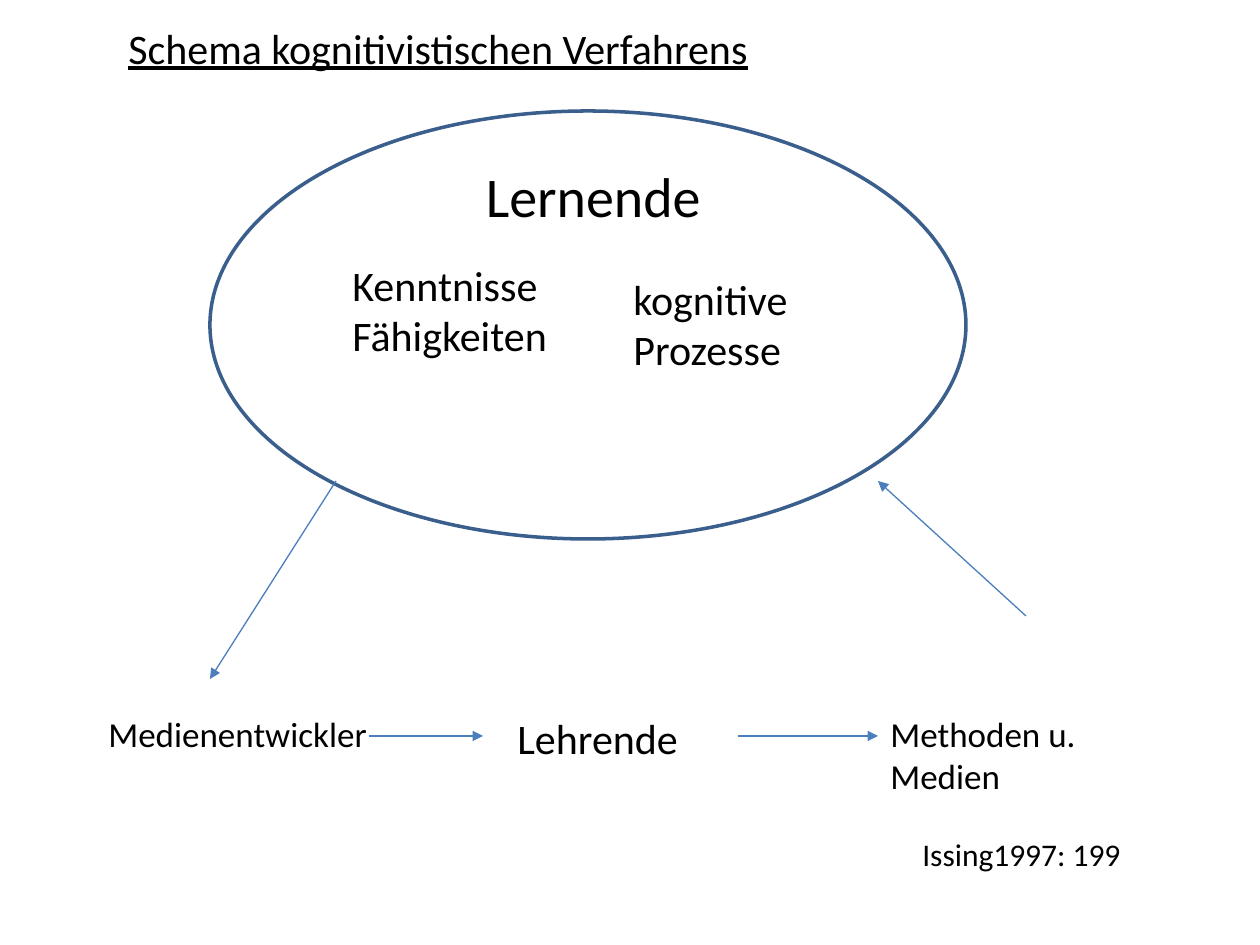
from collections import namedtuple
from dataclasses import dataclass

from lxml.etree import SubElement
from pptx import Presentation
from pptx.dml.color import RGBColor
from pptx.enum.shapes import MSO_CONNECTOR as Connector, MSO_SHAPE as Shape
from pptx.enum.text import MSO_AUTO_SIZE as AutoSize, PP_ALIGN as Align
from pptx.oxml.ns import qn
from pptx.util import Emu, Pt

PX = 914400 // 126
Box = namedtuple("Box", "left top width height")


@dataclass(frozen=True)
class Theme:
    font: str = "Calibri"
    ink: RGBColor = RGBColor(0x00, 0x00, 0x00)
    paper: RGBColor = RGBColor(0xFF, 0xFF, 0xFF)
    outline: RGBColor = RGBColor(0x3A, 0x5F, 0x8C)
    arrow: RGBColor = RGBColor(0x4B, 0x7E, 0xBC)
    heading: int = 32
    body: int = 24
    label: int = 20
    source: int = 18
    outline_width: float = 2
    arrow_width: float = 0.75


THEME = Theme()


def px(*lengths):
    return [Emu(length * PX) for length in lengths]


def inside(box, left, top, width, height):
    return Box(box.left + left, box.top + top, width, height)


def add_text(slide, box, text, size=THEME.body, align=Align.LEFT, underline=False):
    frame = slide.shapes.add_textbox(*px(*box)).text_frame
    frame.word_wrap = True
    frame.auto_size = AutoSize.SHAPE_TO_FIT_TEXT
    frame.text = text
    for paragraph in frame.paragraphs:
        paragraph.alignment = align
        font = paragraph.runs[0].font
        font.name, font.size = THEME.font, Pt(size)
        font.color.rgb = THEME.ink
        if underline:
            font.underline = True


def add_arrow(slide, start, end):
    arrow = slide.shapes.add_connector(Connector.STRAIGHT, *px(*start, *end))
    arrow.line.color.rgb = THEME.arrow
    arrow.line.width = Pt(THEME.arrow_width)
    SubElement(arrow.line._get_or_add_ln(), qn("a:tailEnd"), type="triangle")
    SubElement(arrow._element.spPr, qn("a:effectLst"))


def add_learners(slide, box):
    ellipse = slide.shapes.add_shape(Shape.OVAL, *px(*box))
    ellipse.shadow.inherit = False
    ellipse.fill.solid()
    ellipse.fill.fore_color.rgb = THEME.paper
    ellipse.line.color.rgb = THEME.outline
    ellipse.line.width = Pt(THEME.outline_width)
    add_text(slide, inside(box, 130, 142, 241, 115), "Kenntnisse\nFähigkeiten")
    add_text(slide, inside(box, 411, 156, 222, 115), "kognitive\nProzesse")
    add_text(slide, inside(box, 245, 44, 277, 81), "Lernende",
             size=THEME.heading, align=Align.CENTER)


def add_teaching_chain(slide, box):
    stations = [
        ("Medienentwickler", 0, 292, 55, THEME.label),
        ("Lehrende", 409, 232, 63, THEME.body),
        ("Methoden u. Medien", 782, 300, 97, THEME.label),
    ]
    for text, left, width, height, size in stations:
        add_text(slide, inside(box, left, 0, width, height), text, size=size)
    arrow_y = box.top + 30
    for start, end in ((273, 387), (642, 782)):
        add_arrow(slide, (box.left + start, arrow_y), (box.left + end, arrow_y))


def add_feedback_arrows(slide, box):
    right = box.left + box.width
    add_arrow(slide, (box.left + 126, box.top), (box.left, box.top + box.height))
    add_arrow(slide, (right, box.top + 135), (right - 148, box.top))


def main():
    deck = Presentation()
    deck.slide_width, deck.slide_height = px(1260, 945)
    slide = deck.slides.add_slide(deck.slide_layouts[6])

    # Learners and what they bring along
    add_learners(slide, Box(210, 111, 756, 428))
    # Learners inform the developers, media act on the learners
    add_feedback_arrows(slide, Box(210, 481, 816, 198))
    # From developers through teachers to media
    add_teaching_chain(slide, Box(96, 706, 1082, 97))
    # Source and title
    add_text(slide, Box(910, 829, 268, 50), "Issing1997: 199", size=THEME.source)
    add_text(slide, Box(116, 16, 837, 63), "Schema kognitivistischen Verfahrens",
             underline=True)

    deck.save("out.pptx")


if __name__ == "__main__":
    main()
